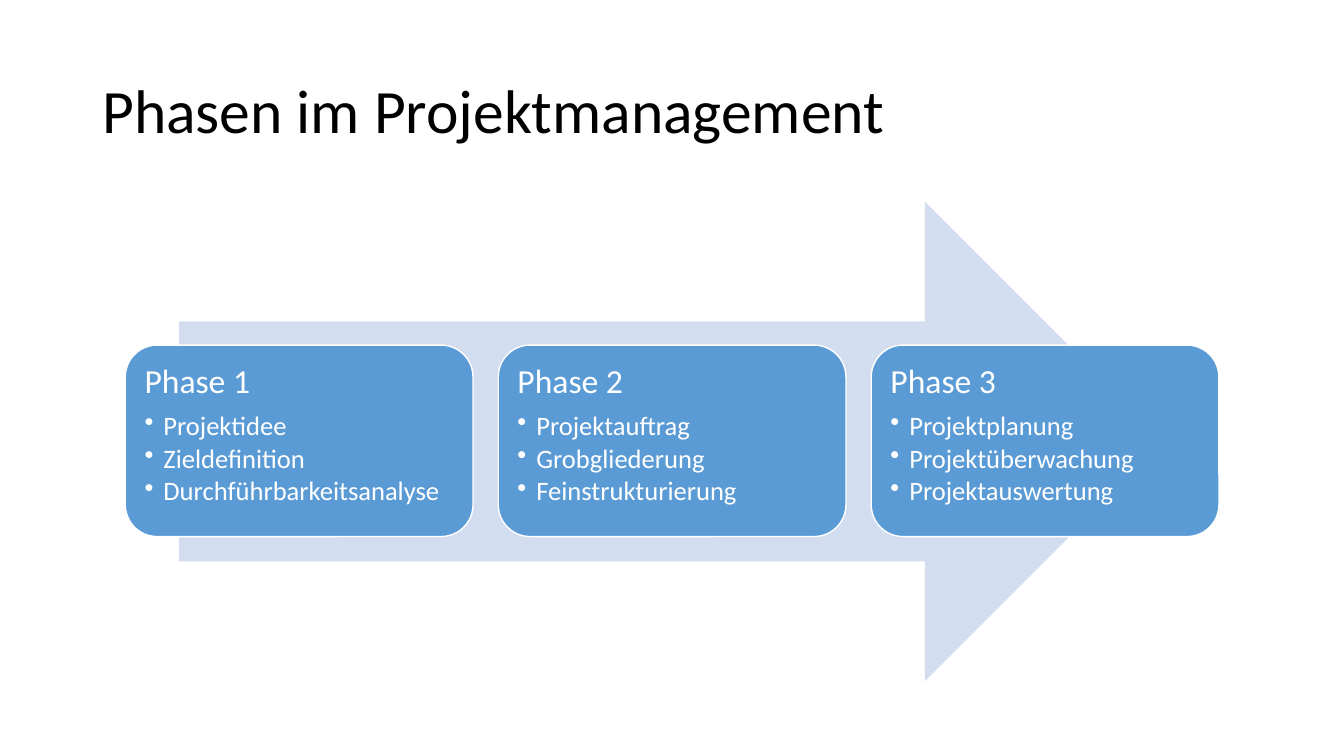
from lxml import etree
from pptx import Presentation
from pptx import util as u
from pptx.dml.color import RGBColor
from pptx.enum import shapes, text
from pptx.oxml.ns import qn

PHASES = {
    "Phase 1": ["Projektidee", "Zieldefinition", "Durchführbarkeitsanalyse"],
    "Phase 2": ["Projektauftrag", "Grobgliederung", "Feinstrukturierung"],
    "Phase 3": ["Projektplanung", "Projektüberwachung", "Projektauswertung"],
}
CARD_LEFT, CARD_TOP, CARD_WIDTH, CARD_HEIGHT = 89.5, 246.5, 248.4, 136.8
CARD_STEP = 266.4
BULLET_INDENT = 13.5


def color(hex_value):
    return RGBColor.from_string(hex_value)


def assign(target, values):
    for name, value in values.items():
        setattr(target, name, value)


class SlideBuilder:
    font_name = "Calibri"
    black, white = "000000", "FFFFFF"
    card_fill, arrow_fill = "5B9BD5", "D2DEEF"

    def __init__(self, slide):
        self.slide = slide

    def place(self, *lengths):
        return [u.Pt(length) for length in lengths]

    def frame(self, box, anchor, inset_x=7.2, inset_y=3.6):
        """Set wrapping, anchor and insets, and return the text frame."""
        assign(box.text_frame, {
            "word_wrap": True, "vertical_anchor": anchor,
            "margin_left": u.Pt(inset_x), "margin_right": u.Pt(inset_x),
            "margin_top": u.Pt(inset_y), "margin_bottom": u.Pt(inset_y),
        })
        return box.text_frame

    def fill_para(self, para, words, size, fill, after=0):
        assign(para, {
            "alignment": text.PP_ALIGN.LEFT, "line_spacing": 0.9,
            "space_before": u.Pt(0), "space_after": u.Pt(after),
        })
        span = para.add_run()
        span.text = words
        assign(span.font, {"name": self.font_name, "size": u.Pt(size)})
        span.font.color.rgb = color(fill)

    def bullet(self, para):
        para.level = 1
        properties = para._p.get_or_add_pPr()
        properties.set("marL", str(u.Pt(BULLET_INDENT)))
        properties.set("indent", str(-u.Pt(BULLET_INDENT)))
        etree.SubElement(properties, qn("a:buChar")).set("char", "•")

    def title(self, words, *area):
        box = self.slide.shapes.add_textbox(*self.place(*area))
        frame = self.frame(box, text.MSO_ANCHOR.MIDDLE)
        self.fill_para(frame.paragraphs[0], words, 44, self.black)

    def shape(self, kind, fill, *area, line=None):
        box = self.slide.shapes.add_shape(kind, *self.place(*area))
        box.shadow.inherit = False
        box.fill.solid()
        box.fill.fore_color.rgb = color(fill)
        if line:
            box.line.color.rgb = color(line)
            box.line.width = u.Pt(1)
        else:
            box.line.fill.background()
        return box

    def arrow(self, *area):
        self.shape(shapes.MSO_SHAPE.RIGHT_ARROW, self.arrow_fill, *area)

    def card(self, heading, steps, *area):
        box = self.shape(shapes.MSO_SHAPE.ROUNDED_RECTANGLE, self.card_fill,
                         *area, line=self.white)
        frame = self.frame(box, text.MSO_ANCHOR.TOP, 7.2, 7.2)
        self.fill_para(frame.paragraphs[0], heading, 24, self.white, after=8.4)
        for step in steps:
            para = frame.add_paragraph()
            self.bullet(para)
            self.fill_para(para, step, 19, self.white, after=2.85)


def main():
    deck = Presentation()
    assign(deck, {"slide_width": u.Pt(960), "slide_height": u.Pt(540)})
    page = SlideBuilder(deck.slides.add_slide(deck.slide_layouts[6]))
    page.title("Phasen im Projektmanagement", 66, 28.8, 828, 104.4)
    page.arrow(128, 144, 704, 342.7)
    for index, (heading, steps) in enumerate(PHASES.items()):
        page.card(heading, steps, CARD_LEFT + index * CARD_STEP, CARD_TOP,
                  CARD_WIDTH, CARD_HEIGHT)
    deck.save("out.pptx")


if __name__ == "__main__":
    main()
